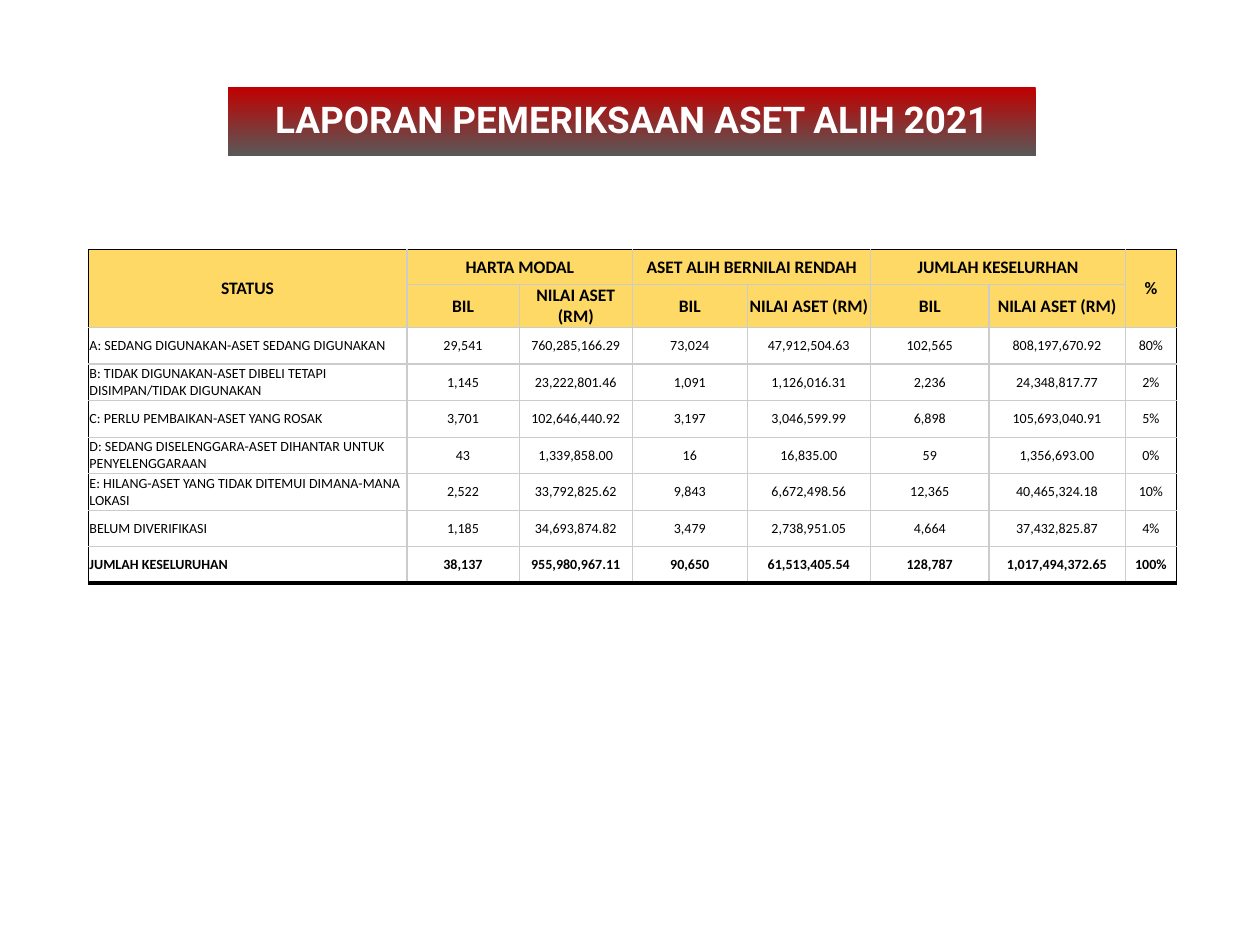
import pptx
import pptx.util
import pptx.dml.color
import pptx.enum.text
import pptx.oxml
import pptx.oxml.ns
from lxml import etree

Inches = pptx.util.Inches
Pt = pptx.util.Pt
ALIGN = pptx.enum.text.PP_ALIGN
MIDDLE = pptx.enum.text.MSO_ANCHOR.MIDDLE
qn = pptx.oxml.ns.qn

BLACK, GREY, YELLOW = "000000", "CCCCCC", "FFD965"
COL_WIDTHS = [2.53, 0.89, 0.9, 0.91, 0.98, 0.94, 1.08, 0.41]
ROW_HEIGHTS = [0.28, 0.34] + [0.29] * 7
HEADER_ROWS = 2

ROWS = [
    ["STATUS", "HARTA MODAL", "", "ASET ALIH BERNILAI RENDAH", "",
     "JUMLAH KESELURHAN", "", "%"],
    [""] + ["BIL", "NILAI ASET (RM)"] * 3 + [""],
    ["A: SEDANG DIGUNAKAN-ASET SEDANG DIGUNAKAN", "29,541", "760,285,166.29",
     "73,024", "47,912,504.63", "102,565", "808,197,670.92", "80%"],
    ["B: TIDAK DIGUNAKAN-ASET DIBELI TETAPI DISIMPAN/TIDAK DIGUNAKAN", "1,145",
     "23,222,801.46", "1,091", "1,126,016.31", "2,236", "24,348,817.77", "2%"],
    ["C: PERLU PEMBAIKAN-ASET YANG ROSAK", "3,701", "102,646,440.92",
     "3,197", "3,046,599.99", "6,898", "105,693,040.91", "5%"],
    ["D: SEDANG DISELENGGARA-ASET DIHANTAR UNTUK PENYELENGGARAAN", "43",
     "1,339,858.00", "16", "16,835.00", "59", "1,356,693.00", "0%"],
    ["E: HILANG-ASET YANG TIDAK DITEMUI DIMANA-MANA LOKASI", "2,522",
     "33,792,825.62", "9,843", "6,672,498.56", "12,365", "40,465,324.18", "10%"],
    ["BELUM DIVERIFIKASI", "1,185", "34,693,874.82",
     "3,479", "2,738,951.05", "4,664", "37,432,825.87", "4%"],
    ["JUMLAH KESELURUHAN", "38,137", "955,980,967.11",
     "90,650", "61,513,405.54", "128,787", "1,017,494,372.65", "100%"],
]


def rgb(color):
    return pptx.dml.color.RGBColor.from_string(color)


def write(tf, text, size, font="Calibri", color=BLACK, bold=False,
          align=ALIGN.CENTER, spacing=1.0):
    p = tf.paragraphs[0]
    p.alignment = align
    p.line_spacing = spacing
    r = p.add_run()
    r.text = text
    r.font.size = Pt(size)
    r.font.name = font
    r.font.bold = bold
    r.font.color.rgb = rgb(color)


def set_margins(box, x, y):
    box.margin_left = box.margin_right = Inches(x)
    box.margin_top = box.margin_bottom = Inches(y)


def add_banner(s, text):
    """Turn the title placeholder into a rounded gradient banner."""
    sp = s.shapes.title
    sp.left, sp.top = Inches(1.81), Inches(0.69)
    sp.width, sp.height = Inches(6.41), Inches(0.55)
    geom = etree.SubElement(sp.element.spPr, qn("a:prstGeom"),
                            prst="flowChartAlternateProcess")
    etree.SubElement(geom, qn("a:avLst"))
    # Gradient from red at the top to grey at the bottom
    sp.fill.gradient()
    sp.fill.gradient_angle = 270
    for stop, color, position in zip(sp.fill.gradient_stops,
                                     ["C00000", "595959"], [0, 1]):
        stop.color.rgb = rgb(color)
        stop.position = position
    sp.line.fill.background()
    tf = sp.text_frame
    tf.word_wrap = True
    tf.auto_size = pptx.enum.text.MSO_AUTO_SIZE.NONE
    tf.vertical_anchor = MIDDLE
    set_margins(tf, 0.07, 0.04)
    write(tf, text, 21, font="Roboto", color="FFFFFF", bold=True, spacing=0.9)


def set_borders(cell, borders):
    """Put the border lines, in schema order, ahead of the cell's fill."""
    tc_pr = cell._tc.get_or_add_tcPr()
    for i, (side, (color, width)) in enumerate(borders.items()):
        ln = etree.Element(qn("a:ln" + side), w=str(Pt(width)))
        fill = etree.SubElement(ln, qn("a:solidFill"))
        etree.SubElement(fill, qn("a:srgbClr"), val=color)
        tc_pr.insert(i, ln)


def format_cell(cell, text, row, col):
    header = row < HEADER_ROWS
    last_row, last_col = len(ROWS) - 1, len(COL_WIDTHS) - 1
    cell.vertical_anchor = MIDDLE
    set_margins(cell, 0.01, 0)
    if header:
        cell.fill.solid()
        cell.fill.fore_color.rgb = rgb(YELLOW)
    else:
        cell.fill.background()
    inner, outer = (GREY, 0.75), (BLACK, 0.75)
    set_borders(cell, {
        "L": outer if col == 0 else inner,
        "R": outer if col == last_col else inner,
        "T": outer if row == 0 else inner,
        "B": (BLACK, 2.25) if row == last_row else inner,
    })
    if text:
        write(cell.text_frame, text, 10 if header else 8,
              bold=header or row == last_row,
              align=ALIGN.CENTER if header or col else ALIGN.LEFT)


def add_asset_table(s):
    frame = s.shapes.add_table(len(ROWS), len(COL_WIDTHS), Inches(0.7), Inches(1.98),
                               Inches(sum(COL_WIDTHS)), Inches(sum(ROW_HEIGHTS)))
    table = frame.table
    table.horz_banding = table.first_row = False
    for column, width in zip(table.columns, COL_WIDTHS):
        column.width = Inches(width)
    for row, height in zip(table.rows, ROW_HEIGHTS):
        row.height = Inches(height)
    # Headings: two tall cells at the ends, three wide ones between them
    for col in (0, 7):
        table.cell(0, col).merge(table.cell(1, col))
    for col in (1, 3, 5):
        table.cell(0, col).merge(table.cell(0, col + 1))
    for row, texts in enumerate(ROWS):
        for col, text in enumerate(texts):
            format_cell(table.cell(row, col), text, row, col)


def main():
    prs = pptx.Presentation()
    prs.slide_width, prs.slide_height = Inches(10), Inches(7.5)
    s = prs.slides.add_slide(prs.slide_layouts[5])
    add_banner(s, "LAPORAN PEMERIKSAAN ASET ALIH 2021")
    add_asset_table(s)
    prs.save("out.pptx")


if __name__ == "__main__":
    main()
